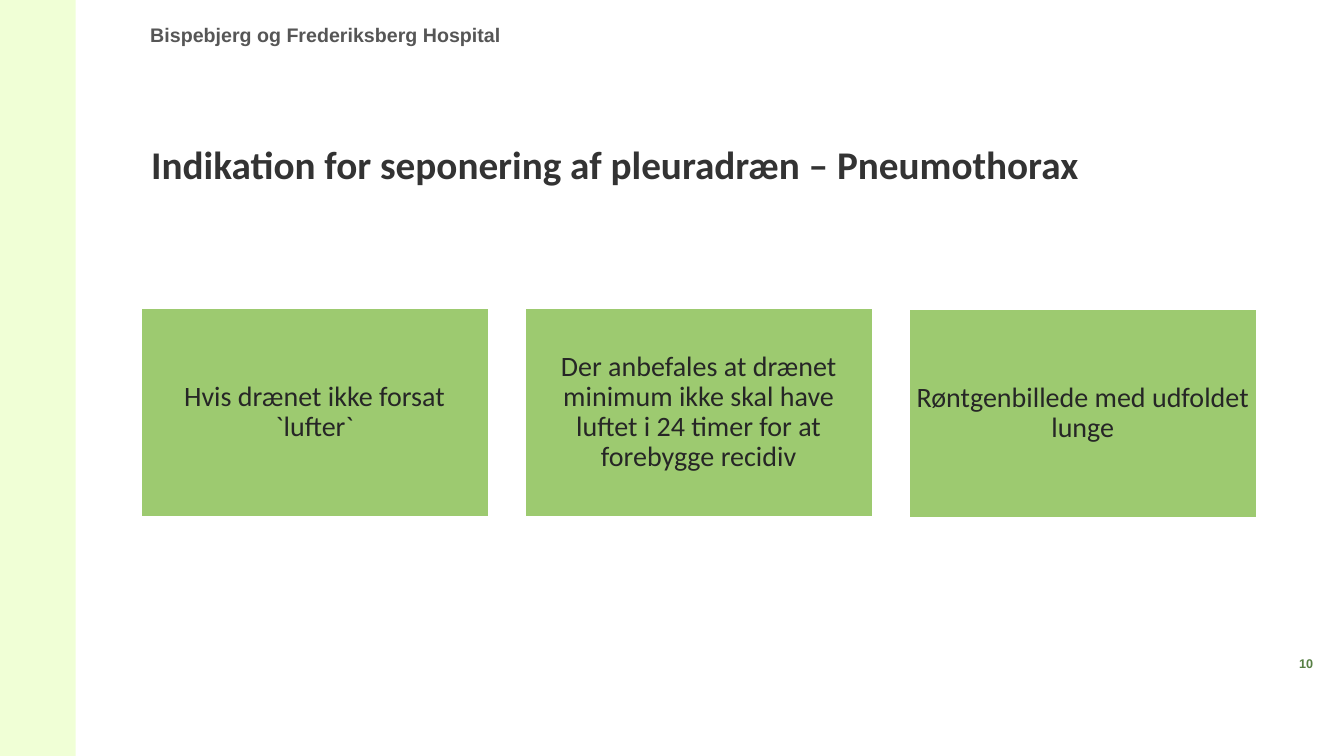
from dataclasses import dataclass

from pptx import Presentation
from pptx.dml.color import RGBColor
from pptx.enum.shapes import MSO_SHAPE
from pptx.enum.text import MSO_ANCHOR, PP_ALIGN
from pptx.shapes.autoshape import Shape
from pptx.slide import Slide
from pptx.util import Emu, Inches, Pt

RECTANGLE = MSO_SHAPE.RECTANGLE
TOP, MIDDLE, BOTTOM = MSO_ANCHOR.TOP, MSO_ANCHOR.MIDDLE, MSO_ANCHOR.BOTTOM
LEFT, CENTER = PP_ALIGN.LEFT, PP_ALIGN.CENTER

SLIDE_WIDTH, SLIDE_HEIGHT = Inches(13.33), Inches(7.5)
GRID_COLUMNS, GRID_ROWS = 133.3, 75
BLANK_LAYOUT = 6


@dataclass(frozen=True)
class Theme:
    heading_font: str = "Calibri"
    label_font: str = "Arial"
    background: str = "FFFFFF"
    band: str = "F0FFD6"
    card: str = "9DCA70"
    card_line: str = "FFFFFF"
    card_text: str = "262626"
    title: str = "333333"
    header: str = "565656"
    number: str = "567F43"
    title_size: float = 28
    card_size: float = 20
    header_size: float = 14
    number_size: float = 9
    line_width: float = 2


@dataclass(frozen=True)
class Area:
    column: float
    row: float
    columns: float
    rows: float

    def box(self) -> tuple[Emu, Emu, Emu, Emu]:
        column_width = SLIDE_WIDTH / GRID_COLUMNS
        row_height = SLIDE_HEIGHT / GRID_ROWS
        return (
            Emu(round(self.column * column_width)),
            Emu(round(self.row * row_height)),
            Emu(round(self.columns * column_width)),
            Emu(round(self.rows * row_height)),
        )


@dataclass(frozen=True)
class Card:
    text: str
    row: float = 30.5


THEME = Theme()
CARD_LEFT, CARD_STEP = 13.9, 38.1
CARD_COLUMNS, CARD_ROWS = 34.6, 20.8
CARDS = (
    Card("Hvis drænet ikke forsat `lufter`"),
    Card(
        "Der anbefales at drænet minimum ikke skal have luftet i 24 timer "
        "for at forebygge recidiv"
    ),
    Card("Røntgenbillede med udfoldet lunge", row=30.6),
)


def write_text(
    shape: Shape,
    text: str,
    *,
    font: str,
    size: float,
    color: str,
    bold: bool = False,
    align: PP_ALIGN = LEFT,
    anchor: MSO_ANCHOR = TOP,
    spacing: float = 1.0,
    inset: float = 0,
) -> None:
    frame = shape.text_frame
    frame.word_wrap = True
    frame.vertical_anchor = anchor
    frame.margin_left = frame.margin_right = Inches(inset)
    frame.margin_top = frame.margin_bottom = Inches(inset)
    paragraph = frame.paragraphs[0]
    paragraph.alignment = align
    paragraph.line_spacing = spacing
    run = paragraph.add_run()
    run.text = text
    run.font.name = font
    run.font.size = Pt(size)
    run.font.bold = bold
    run.font.color.rgb = RGBColor.from_string(color)


def add_rectangle(slide: Slide, area: Area, fill: str, line: str | None = None) -> Shape:
    shape = slide.shapes.add_shape(RECTANGLE, *area.box())
    shape.shadow.inherit = False
    shape.fill.solid()
    shape.fill.fore_color.rgb = RGBColor.from_string(fill)
    if line is None:
        shape.line.fill.background()
    else:
        shape.line.color.rgb = RGBColor.from_string(line)
        shape.line.width = Pt(THEME.line_width)
    return shape


def add_card(slide: Slide, index: int, card: Card) -> None:
    area = Area(CARD_LEFT + index * CARD_STEP, card.row, CARD_COLUMNS, CARD_ROWS)
    write_text(
        add_rectangle(slide, area, THEME.card, THEME.card_line),
        card.text,
        font=THEME.heading_font,
        size=THEME.card_size,
        color=THEME.card_text,
        align=CENTER,
        anchor=MIDDLE,
        spacing=0.9,
        inset=0.07,
    )


def main() -> None:
    presentation = Presentation()
    presentation.slide_width, presentation.slide_height = SLIDE_WIDTH, SLIDE_HEIGHT
    slide = presentation.slides.add_slide(presentation.slide_layouts[BLANK_LAYOUT])
    slide.background.fill.solid()
    slide.background.fill.fore_color.rgb = RGBColor.from_string(THEME.background)

    add_rectangle(slide, Area(0, 0, 7.5, GRID_ROWS), THEME.band)
    write_text(
        slide.shapes.add_textbox(*Area(14.9, 2.3, 66.9, 2.4).box()),
        "Bispebjerg og Frederiksberg Hospital",
        font=THEME.label_font,
        size=THEME.header_size,
        color=THEME.header,
        bold=True,
    )
    write_text(
        slide.shapes.add_textbox(*Area(15, 9.5, 110.9, 9.1).box()),
        "Indikation for seponering af pleuradræn – Pneumothorax",
        font=THEME.heading_font,
        size=THEME.title_size,
        color=THEME.title,
        bold=True,
        anchor=BOTTOM,
        spacing=0.85,
    )
    write_text(
        slide.shapes.add_textbox(*Area(125.8, 65.1, 7.5, 2).box()),
        "10",
        font=THEME.label_font,
        size=THEME.number_size,
        color=THEME.number,
        bold=True,
        align=CENTER,
    )
    for index, card in enumerate(CARDS):
        add_card(slide, index, card)

    presentation.save("out.pptx")


if __name__ == "__main__":
    main()
